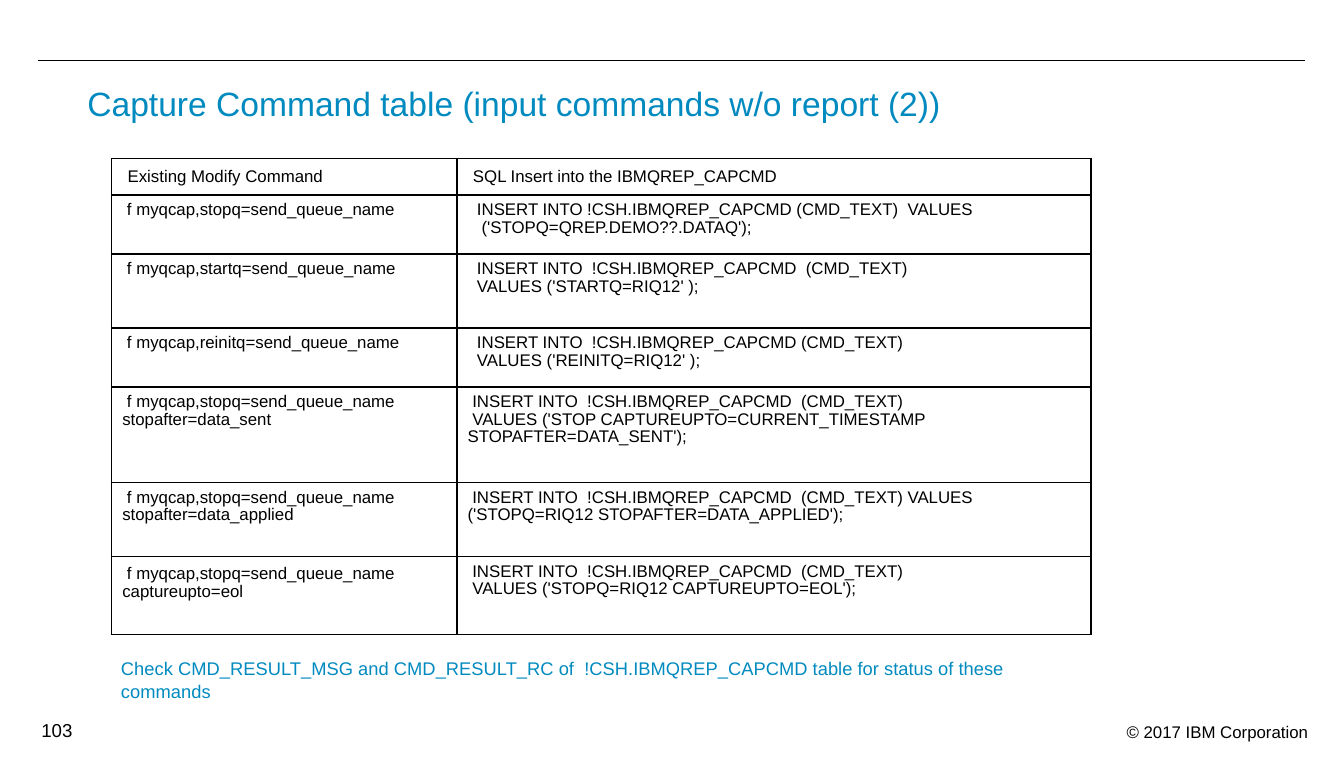
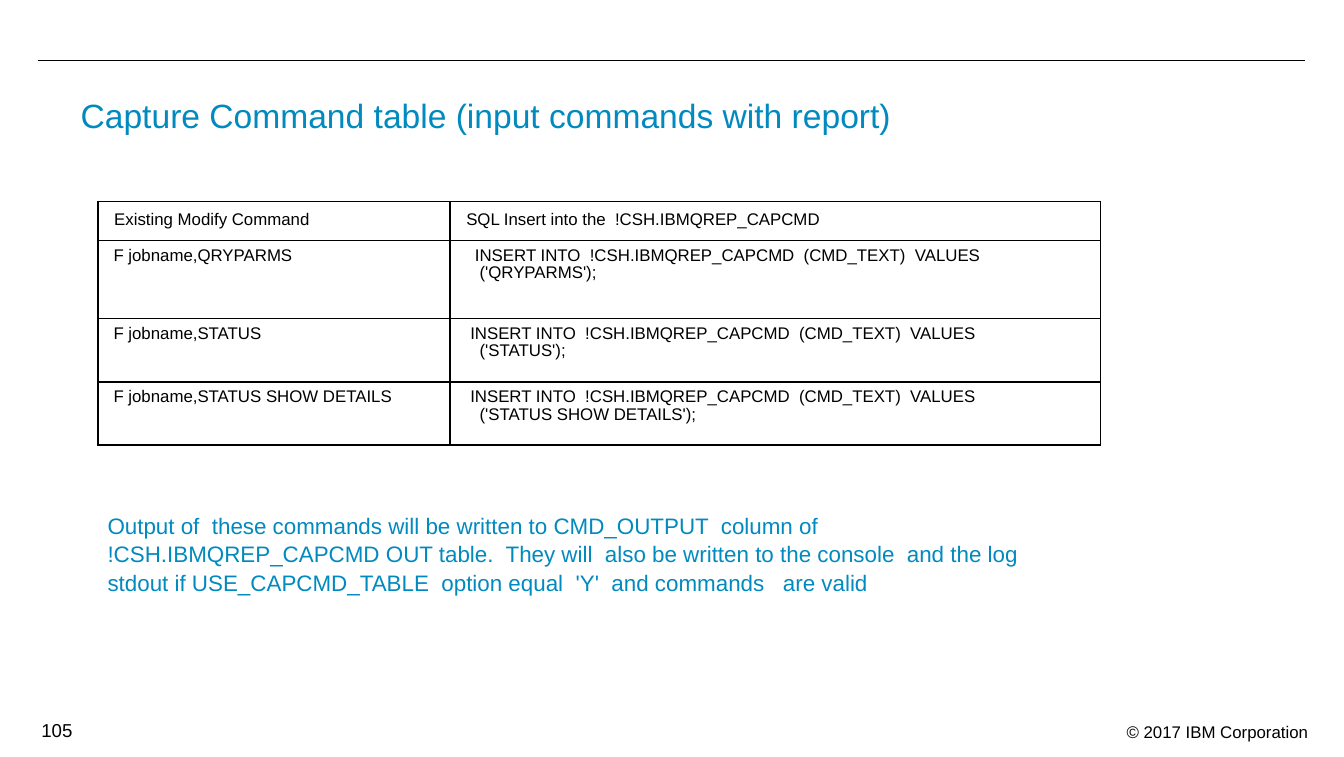
"""Build two slides on the Capture Command table and its input commands."""
from lxml.etree import SubElement
from pptx import Presentation
from pptx.dml.color import RGBColor
from pptx.enum.shapes import MSO_CONNECTOR
from pptx.enum.text import MSO_ANCHOR, MSO_AUTO_SIZE, PP_ALIGN
from pptx.oxml import parse_xml
from pptx.oxml.ns import nsdecls, qn
from pptx.util import Inches, Pt

BLACK = "000000"
BLUE = "008ABF"
FONT = "Arial"


def color(value):
    return RGBColor.from_string(value)


def assign(target, values):
    for name, value in values.items():
        setattr(target, name, value)


def margins(left, top, right, bottom):
    sides = ("left", "top", "right", "bottom")
    return {f"margin_{side}": Inches(size)
            for side, size in zip(sides, (left, top, right, bottom))}


def border(side):
    return parse_xml(
        f'<a:{side} {nsdecls("a")} w="11557"><a:solidFill><a:srgbClr val="{BLACK}"/>'
        f'</a:solidFill><a:prstDash val="solid"/></a:{side}>')


class Deck:
    text_margins = margins(0.07, 0.04, 0.07, 0.04)
    cell_margins = margins(0.08, 0.05, 0.08, 0.04)
    lowered_margins = margins(0.08, 0.07, 0.08, 0.04)
    header_margins = margins(0.12, 0.07, 0.08, 0.04)

    def __init__(self):
        self.presentation = Presentation()
        assign(self.presentation, {"slide_width": Inches(10), "slide_height": Inches(5.63)})
        self.slide = None

    def add_slide(self, number):
        self.slide = self.presentation.slides.add_slide(self.presentation.slide_layouts[1])
        self.rule()
        self.label("© 2017 IBM Corporation", (6.49, 5.32, 3.34, 0.25), 9, PP_ALIGN.RIGHT)
        self.label(str(number), (0.21, 5.3, 0.6, 0.2), 10)

    def set_text(self, frame, text, size, font_color, **layout):
        frame.text = text
        for paragraph in frame.paragraphs:
            assign(paragraph, {"alignment": PP_ALIGN.LEFT, "space_before": Pt(0), **layout})
            assign(paragraph.font, {"name": FONT, "size": Pt(size)})
            paragraph.font.color.rgb = color(font_color)

    def rule(self):
        connector = self.slide.shapes.add_connector(
            MSO_CONNECTOR.STRAIGHT, Inches(0.28), Inches(0.45), Inches(9.71), Inches(0.45))
        connector.line.color.rgb = color(BLACK)
        connector.line.width = Pt(0.75)
        SubElement(connector._element.spPr, qn("a:effectLst"))

    def label(self, text, box, size, alignment=PP_ALIGN.LEFT):
        shape = self.slide.shapes.add_textbox(*map(Inches, box))
        shape.text_frame.word_wrap = True
        self.set_text(shape.text_frame, text, size, BLACK, alignment=alignment)

    def fill_placeholder(self, shape, text, box, size, spacing):
        assign(shape, dict(zip(("left", "top", "width", "height"), map(Inches, box))))
        assign(shape.text_frame, {
            "word_wrap": True, "auto_size": MSO_AUTO_SIZE.NONE,
            "vertical_anchor": MSO_ANCHOR.TOP, **self.text_margins})
        self.set_text(shape.text_frame, text, size, BLUE, line_spacing=spacing)

    def title(self, text, box):
        self.fill_placeholder(self.slide.shapes.title, text, box, 18, 0.95)

    def note(self, text, box, size):
        shape = self.slide.placeholders[1]
        self.fill_placeholder(shape, text, box, size, 1.05)
        for paragraph in shape.text_frame.paragraphs:
            properties = paragraph._p.get_or_add_pPr()
            properties.set("marL", "0")
            properties.set("indent", "0")
            bullet = parse_xml(f'<a:buNone {nsdecls("a")}/>')
            properties.insert_element_before(bullet, "a:tabLst", "a:defRPr", "a:extLst")

    def table(self, left, top, widths, heights, rows, lowered=()):
        box = map(Inches, (left, top, sum(widths), sum(heights)))
        table = self.slide.shapes.add_table(len(rows), len(widths), *box).table
        assign(table, {"first_row": False, "horz_banding": False})
        for column, width in zip(table.columns, widths):
            column.width = Inches(width)
        for row, height in zip(table.rows, heights):
            row.height = Inches(height)
        for row_index, texts in enumerate(rows):
            for column_index, text in enumerate(texts):
                cell = table.cell(row_index, column_index)
                self.set_text(cell.text_frame, text, 9, BLACK, line_spacing=0.93)
                if row_index == 0:
                    assign(cell, self.header_margins)
                elif (row_index, column_index) in lowered:
                    assign(cell, self.lowered_margins)
                else:
                    assign(cell, self.cell_margins)
                cell.fill.background()
                properties = cell._tc.get_or_add_tcPr()
                for position, side in enumerate(("lnL", "lnR", "lnT", "lnB")):
                    properties.insert(position, border(side))


def commands_without_report(deck):
    deck.add_slide(103)
    deck.title("Capture Command table (input commands w/o report (2))", (0.58, 0.6, 7.55, 0.36))
    rows = [
        ("Existing Modify Command", "SQL Insert into the IBMQREP_CAPCMD"),
        (" f myqcap,stopq=send_queue_name",
         "  INSERT INTO !CSH.IBMQREP_CAPCMD (CMD_TEXT)  VALUES\n"
         "   ('STOPQ=QREP.DEMO??.DATAQ');"),
        (" f myqcap,startq=send_queue_name",
         "  INSERT INTO  !CSH.IBMQREP_CAPCMD  (CMD_TEXT)\n"
         "  VALUES ('STARTQ=RIQ12' );"),
        (" f myqcap,reinitq=send_queue_name",
         "  INSERT INTO  !CSH.IBMQREP_CAPCMD (CMD_TEXT)\n"
         "  VALUES ('REINITQ=RIQ12' );"),
        (" f myqcap,stopq=send_queue_name stopafter=data_sent",
         " INSERT INTO  !CSH.IBMQREP_CAPCMD  (CMD_TEXT)\n"
         " VALUES ('STOP CAPTUREUPTO=CURRENT_TIMESTAMP STOPAFTER=DATA_SENT');"),
        (" f myqcap,stopq=send_queue_name stopafter=data_applied",
         " INSERT INTO  !CSH.IBMQREP_CAPCMD  (CMD_TEXT) VALUES\n"
         "('STOPQ=RIQ12 STOPAFTER=DATA_APPLIED');"),
        (" f myqcap,stopq=send_queue_name captureupto=eol",
         " INSERT INTO  !CSH.IBMQREP_CAPCMD  (CMD_TEXT)\n"
         " VALUES ('STOPQ=RIQ12 CAPTUREUPTO=EOL');"),
    ]
    deck.table(0.83, 1.18, (2.57, 4.72), (0.27, 0.44, 0.55, 0.44, 0.71, 0.55, 0.58),
               rows, lowered={(6, 0)})
    deck.note("Check CMD_RESULT_MSG and CMD_RESULT_RC of  !CSH.IBMQREP_CAPCMD table "
              "for status of these commands", (0.83, 4.84, 7.19, 0.4), 9.8)


def commands_with_report(deck):
    deck.add_slide(105)
    deck.title("Capture Command table (input commands with report)", (0.53, 0.69, 7.12, 0.36))
    insert = "INSERT INTO  !CSH.IBMQREP_CAPCMD  (CMD_TEXT)  VALUES"
    rows = [("Existing Modify Command", "SQL Insert into the  !CSH.IBMQREP_CAPCMD")]
    for command, indent in (("QRYPARMS", "   "), ("STATUS", "  "), ("STATUS SHOW DETAILS", "  ")):
        rows.append((f" F jobname,{command}", f"{indent}{insert}\n    ('{command}');"))
    deck.table(0.73, 1.5, (2.62, 4.84), (0.29, 0.58, 0.47, 0.47), rows)
    deck.note("Output of  these commands will be written to CMD_OUTPUT  column of\n"
              "!CSH.IBMQREP_CAPCMD OUT table.  They will  also be written to the console  "
              "and the log stdout if USE_CAPCMD_TABLE  option equal  'Y'  and commands   "
              "are valid", (0.73, 3.76, 7.08, 0.87), 12)


def main():
    deck = Deck()
    commands_without_report(deck)
    commands_with_report(deck)
    deck.presentation.save("out.pptx")


if __name__ == "__main__":
    main()
